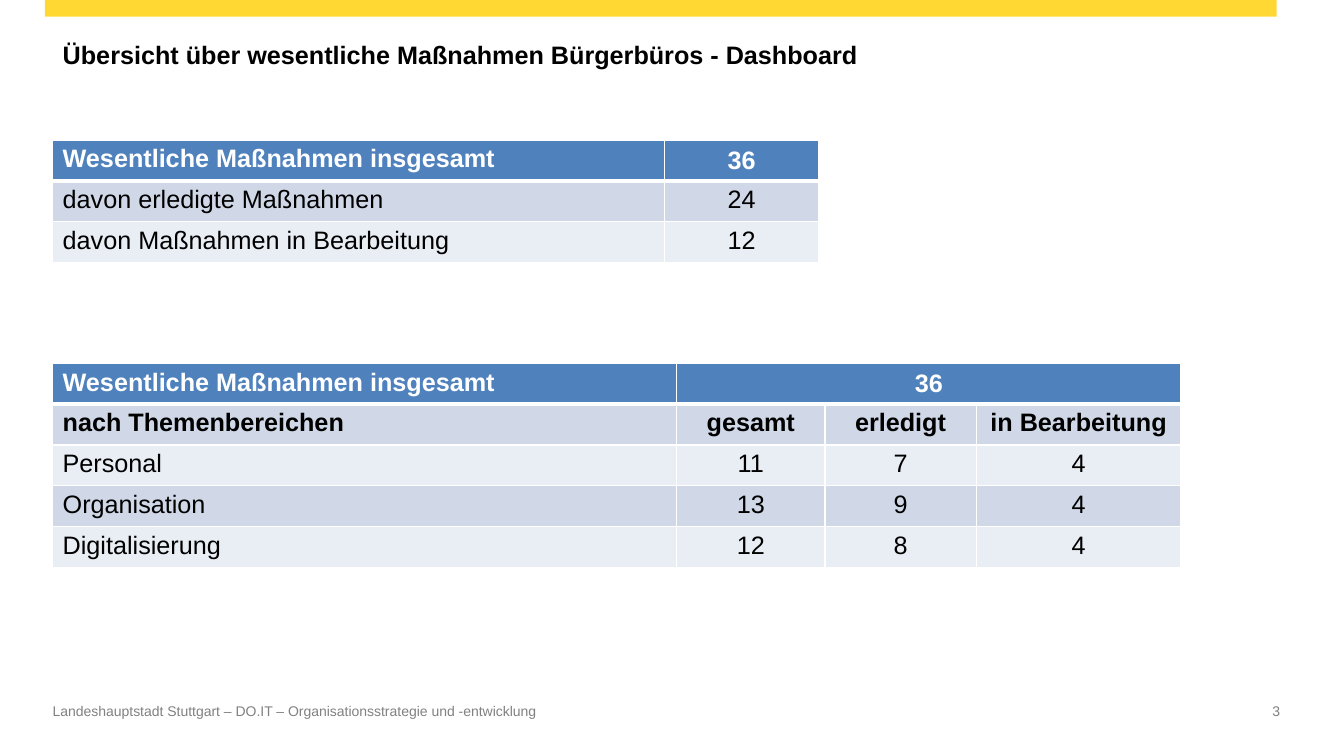
from dataclasses import dataclass

from lxml.etree import SubElement
from pptx import Presentation
from pptx.dml.color import RGBColor
from pptx.enum.shapes import MSO_SHAPE as Shape
from pptx.enum.text import MSO_ANCHOR as Anchor, MSO_AUTO_SIZE as AutoSize, PP_ALIGN as Align
from pptx.oxml.ns import qn
from pptx.util import Pt

FONT = "Arial"
YELLOW, BLUE, WHITE, BLACK, GREY = "FFD833", "4F81BD", "FFFFFF", "000000", "818181"
BANDS = ("D0D8E8", "E9EDF4")
LEFT = 37.6
ROW_HEIGHT = 29.2


@dataclass
class TableSpec:
    top: float
    widths: tuple[float, ...]
    rows: list[tuple[str, ...]]
    bold_rows: int


@dataclass
class FooterSpec:
    text: str
    left: float
    width: float
    align: Align


TABLES = [
    TableSpec(100, (437, 110.2), [
        ("Wesentliche Maßnahmen insgesamt", "36"),
        ("davon erledigte Maßnahmen", "24"),
        ("davon Maßnahmen in Bearbeitung", "12"),
    ], 1),
    TableSpec(259.4, (445.7, 106, 108, 146.4), [
        ("Wesentliche Maßnahmen insgesamt", "36"),
        ("nach Themenbereichen", "gesamt", "erledigt", "in Bearbeitung"),
        ("Personal", "11", "7", "4"),
        ("Organisation", "13", "9", "4"),
        ("Digitalisierung", "12", "8", "4"),
    ], 2),
]
FOOTERS = [
    FooterSpec("Landeshauptstadt Stuttgart – DO.IT – Organisationsstrategie und -entwicklung",
               LEFT, 529, Align.LEFT),
    FooterSpec("3", 835.2, 79.2, Align.RIGHT),
]


def rgb(color: str) -> RGBColor:
    return RGBColor.from_string(color)


def write(tf, text: str, size: float, color: str, bold: bool = False,
          align: Align = Align.LEFT) -> None:
    p = tf.paragraphs[0]
    p.alignment = align
    r = p.add_run()
    r.text = text
    r.font.name, r.font.size, r.font.bold = FONT, Pt(size), bold
    r.font.color.rgb = rgb(color)


def set_borders(cell, row: int) -> None:
    """White cell edges, thicker below the header row."""
    props = cell._tc.get_or_add_tcPr()
    widths = {"a:lnL": 1, "a:lnR": 1, "a:lnT": 3 if row == 1 else 1, "a:lnB": 3 if row == 0 else 1}
    for tag, width in widths.items():
        ln = SubElement(props, qn(tag), w=str(Pt(width)))
        SubElement(SubElement(ln, qn("a:solidFill")), qn("a:srgbClr"), val=WHITE)


def draw_table(s, spec: TableSpec) -> None:
    count, columns = len(spec.rows), len(spec.widths)
    table = s.shapes.add_table(count, columns, Pt(LEFT), Pt(spec.top),
                               Pt(sum(spec.widths)), Pt(ROW_HEIGHT * count)).table
    for column, width in zip(table.columns, spec.widths):
        column.width = Pt(width)
    for i, texts in enumerate(spec.rows):
        table.rows[i].height = Pt(ROW_HEIGHT)
        for j in range(columns):
            cell = table.cell(i, j)
            set_borders(cell, i)
            cell.fill.solid()
            cell.fill.fore_color.rgb = rgb(BLUE if i == 0 else BANDS[(i - 1) % 2])
            if j < len(texts):
                write(cell.text_frame, texts[j], 18, BLACK if i else WHITE,
                      i < spec.bold_rows, Align.CENTER if j else Align.LEFT)
        # A short row: its last text spans the remaining columns
        if len(texts) < columns:
            table.cell(i, len(texts) - 1).merge(table.cell(i, columns - 1))
    table.cell(0, 1).vertical_anchor = Anchor.MIDDLE


def draw_footer(s, spec: FooterSpec) -> None:
    tf = s.shapes.add_textbox(Pt(spec.left), Pt(501.8), Pt(spec.width), Pt(28)).text_frame
    tf.word_wrap = True
    tf.margin_left = tf.margin_right = tf.margin_top = tf.margin_bottom = 0
    write(tf, spec.text, 10, GREY, align=spec.align)


def main() -> None:
    prs = Presentation()
    prs.slide_width, prs.slide_height = Pt(960), Pt(540)
    s = prs.slides.add_slide(prs.slide_layouts[5])

    # Top bar
    bar = s.shapes.add_shape(Shape.RECTANGLE, Pt(32), Pt(0), Pt(880), Pt(12))
    bar.shadow.inherit = False
    bar.fill.solid()
    bar.fill.fore_color.rgb = rgb(YELLOW)
    bar.line.fill.background()

    # Title
    title = s.shapes.title
    title.left, title.top, title.width, title.height = Pt(LEFT), Pt(15.4), Pt(648.7), Pt(46.8)
    tf = title.text_frame
    tf.word_wrap, tf.auto_size, tf.vertical_anchor = True, AutoSize.NONE, Anchor.MIDDLE
    write(tf, "Übersicht über wesentliche Maßnahmen Bürgerbüros - Dashboard", 18, BLACK, True)

    # Tables
    for table in TABLES:
        draw_table(s, table)

    # Footer and page number
    for footer in FOOTERS:
        draw_footer(s, footer)

    prs.save("out.pptx")


if __name__ == "__main__":
    main()
